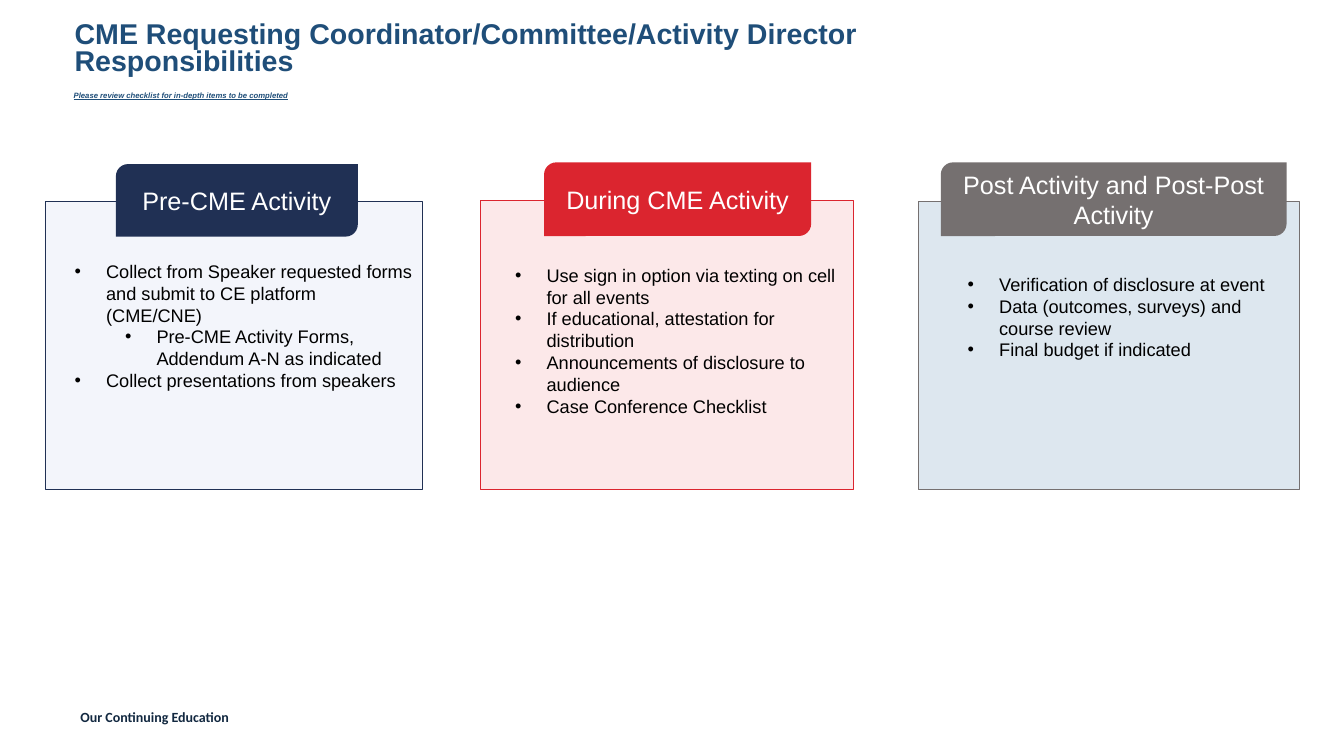
import pptx
import pptx.util
import pptx.dml.color
import pptx.enum.shapes
import pptx.enum.text
import lxml.etree
from dataclasses import dataclass
from pptx.oxml import ns

Pt = pptx.util.Pt
Anchor = pptx.enum.text.MSO_ANCHOR
Align = pptx.enum.text.PP_ALIGN
Shape = pptx.enum.shapes.MSO_SHAPE


@dataclass(frozen=True)
class Theme:
    font: str = "Arial"
    footer_font: str = "Calibri"
    heading: str = "1F4E79"
    footer: str = "122840"
    ink: str = "000000"
    white: str = "FFFFFF"
    navy: str = "203054"
    navy_tint: str = "F3F5FB"
    red: str = "DB252F"
    red_tint: str = "FCE8E9"
    gray: str = "757070"
    gray_tint: str = "DDE7EF"
    title_size: float = 20.4
    label_size: float = 18
    list_size: float = 13
    footer_size: float = 10
    note_size: float = 5.5


THEME = Theme()

STAGES = [
    dict(label="Pre-CME Activity", color=THEME.navy, tint=THEME.navy_tint,
         card=(32, 144, 269.3, 205.2), tab=(82.8, 117.2, 172.8, 51.8),
         area=(46.1, 182.2, 255.6, 101.5), holder=1,
         items=[("Collect from Speaker requested forms and submit to CE platform (CME/CNE)", 0),
                ("Pre-CME Activity Forms, Addendum A-N as indicated", 1),
                ("Collect presentations from speakers", 0)]),
    dict(label="During CME Activity", color=THEME.red, tint=THEME.red_tint,
         card=(343.2, 143.3, 266, 205.9), tab=(388.6, 116, 190.8, 52.6),
         area=(360.7, 185, 245.5, 149), holder=2,
         items=[("Use sign in option via texting on cell for all events", 0),
                ("If educational, attestation for distribution", 0),
                ("Announcements of disclosure to audience", 0),
                ("Case Conference Checklist", 0)]),
    dict(label="Post Activity and Post-Post Activity", color=THEME.gray, tint=THEME.gray_tint,
         card=(656, 144, 272, 205.2), tab=(672, 116, 247, 52.6),
         area=(684, 191.5, 235.4, 101.5), holder=4,
         items=[("Verification of disclosure at event", 0),
                ("Data (outcomes, surveys) and course review", 0),
                ("Final budget if indicated", 0)]),
]


def rgb(value):
    return pptx.dml.color.RGBColor.from_string(value)


def place(box, area):
    box.left, box.top, box.width, box.height = (Pt(length) for length in area)


def prepare(box, anchor=Anchor.TOP):
    frame = box.text_frame
    frame.word_wrap = True
    frame.auto_size = pptx.enum.text.MSO_AUTO_SIZE.NONE
    frame.vertical_anchor = anchor
    return frame


def set_bullet(para, level):
    para.level = level
    properties = para._p.get_or_add_pPr()
    properties.set("marL", str(Pt(22.5 + 36 * level)))
    properties.set("indent", str(Pt(-22.5)))
    font = lxml.etree.SubElement(properties, ns.qn("a:buFont"))
    font.set("typeface", THEME.font)
    lxml.etree.SubElement(properties, ns.qn("a:buChar")).set("char", "•")


def write(para, text, size, color, font=THEME.font, bold=False, italic=False,
          underline=False, spacing=1.0, align=Align.LEFT):
    para.alignment = align
    para.line_spacing = spacing
    para.space_before = Pt(0)
    span = para.add_run()
    span.text = text
    span.font.name = font
    span.font.size = Pt(size)
    span.font.color.rgb = rgb(color)
    span.font.bold = bold
    span.font.italic = italic
    span.font.underline = underline


def add_text(box, area, text, **style):
    place(box, area)
    write(prepare(box).paragraphs[0], text, **style)


def add_panel(page, kind, area, fill, line=None):
    panel = page.shapes.add_shape(kind, *(Pt(length) for length in area))
    panel.shadow.inherit = False
    panel.fill.solid()
    panel.fill.fore_color.rgb = rgb(fill)
    if line:
        panel.line.color.rgb = rgb(line)
        panel.line.width = Pt(0.25)
    else:
        panel.line.fill.background()
    return panel


def fill_list(page, box, area, items):
    place(box, area)
    page.shapes._spTree.append(box._element)
    frame = prepare(box)
    for index, (text, level) in enumerate(items):
        para = frame.add_paragraph() if index else frame.paragraphs[0]
        set_bullet(para, level)
        write(para, text, THEME.list_size, THEME.ink)


def add_stage(page, label, color, tint, card, tab, area, holder, items):
    add_panel(page, Shape.RECTANGLE, card, tint, color)
    heading = add_panel(page, Shape.ROUND_2_DIAG_RECTANGLE, tab, color)
    write(prepare(heading, Anchor.MIDDLE).paragraphs[0], label,
          THEME.label_size, THEME.white, align=Align.CENTER)
    fill_list(page, page.placeholders[holder], area, items)


def main():
    deck = pptx.Presentation()
    deck.slide_width, deck.slide_height = Pt(960), Pt(540)
    page = deck.slides.add_slide(deck.slide_layouts.get_by_name("Comparison"))
    add_text(page.shapes.title, (46.1, 12.2, 689.8, 39.6),
             "CME Requesting Coordinator/Committee/Activity Director Responsibilities",
             size=THEME.title_size, color=THEME.heading, bold=True, spacing=0.8)
    add_text(page.placeholders[3], (45.4, 63.2, 689.8, 26),
             "Please review checklist for in-depth items to be completed",
             size=THEME.note_size, color=THEME.heading, bold=True, italic=True,
             underline=True, spacing=0.7)
    for stage in STAGES:
        add_stage(page, **stage)
    footer = page.shapes.add_textbox(0, 0, 0, 0)
    add_text(footer, (50.4, 504, 357.8, 20.9), "Our Continuing Education",
             size=THEME.footer_size, color=THEME.footer, font=THEME.footer_font,
             bold=True, spacing=0.9)
    deck.save("out.pptx")


if __name__ == "__main__":
    main()
